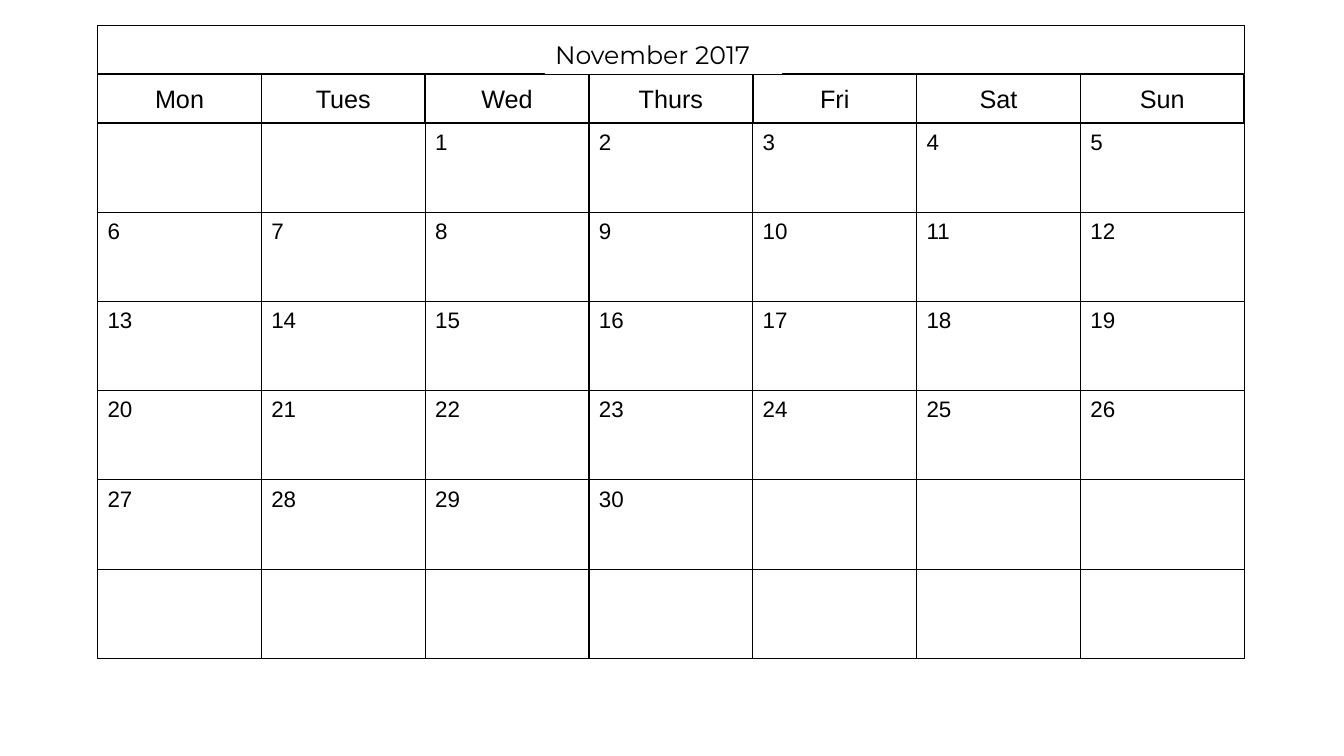
from dataclasses import dataclass
from typing import Any

from pptx import Presentation, util as u
from pptx.dml import color
from pptx.enum import shapes, text

PX = 9525
INK, PAPER = "000000", "FFFFFF"
LEFT, TOP, HEAD, BODY = 93, 24, 71, 117
WIDE, BAR, TALL = 156, 46, 85
DAYS = ["Mon", "Tues", "Wed", "Thurs", "Fri", "Sat", "Sun"]
WEEKS, FIRST, LAST = 6, 2, 30


@dataclass(frozen=True)
class Look:
    font: str
    size: int
    line: float
    align: text.PP_ALIGN
    frame: dict[str, Any]
    hang: int = 0


@dataclass(frozen=True)
class Box:
    x: int
    y: int
    w: int
    h: int
    words: str
    look: Look


NAME = Look("Montserrat", 18, 0, text.PP_ALIGN.LEFT, {
    "word_wrap": False,
    "auto_size": text.MSO_AUTO_SIZE.SHAPE_TO_FIT_TEXT,
    "vertical_anchor": text.MSO_ANCHOR.TOP,
})
DAY = Look("Arial", 18, 1, text.PP_ALIGN.CENTER, {
    "word_wrap": True,
    "vertical_anchor": text.MSO_ANCHOR.MIDDLE,
    "margin_top": 2 * PX,
    "margin_bottom": 2 * PX,
}, 36)
DATE = Look("Arial", 16, 0.75, text.PP_ALIGN.LEFT, {
    "word_wrap": True,
    "vertical_anchor": text.MSO_ANCHOR.TOP,
})


def tint(code: str) -> color.RGBColor:
    return color.RGBColor.from_string(code)


def assign(item: Any, values: dict[str, Any]) -> None:
    for key, value in values.items():
        setattr(item, key, value)


def style(shape: Any, box: Box) -> None:
    look = box.look
    shape.fill.solid()
    shape.fill.fore_color.rgb = tint(PAPER)
    if look.line:
        shape.line.color.rgb = tint(INK)
        shape.line.width = u.Pt(look.line)
    if not box.words:
        return
    frame = shape.text_frame
    frame.text = box.words
    assign(frame, look.frame)
    para = frame.paragraphs[0]
    para.alignment = look.align
    if look.hang:
        props = para._p.get_or_add_pPr()
        props.set("marL", str(look.hang * PX))
        props.set("indent", str(-look.hang * PX))
    font = para.runs[0].font
    assign(font, {"name": look.font, "size": u.Pt(look.size)})
    font.color.rgb = tint(INK)


def draw(slide: Any, box: Box) -> None:
    edges = [n * PX for n in (box.x, box.y, box.w, box.h)]
    shape = slide.shapes.add_shape(shapes.MSO_SHAPE.RECTANGLE, *edges)
    shape.shadow.inherit = False
    style(shape, box)


def head(slide: Any, box: Box) -> None:
    title = slide.shapes.title
    assign(title, {"left": box.x * PX, "top": box.y * PX,
                   "width": box.w * PX, "height": box.h * PX})
    style(title, box)
    title.element.getparent().append(title.element)


def main() -> None:
    deck = Presentation()
    assign(deck, {"slide_width": 1280 * PX, "slide_height": 720 * PX})
    slide = deck.slides.add_slide(deck.slide_layouts[5])
    count = len(DAYS)
    draw(slide, Box(LEFT, TOP, WIDE * count, BAR, "", DAY))
    head(slide, Box(519, 33, 226, 38, "November 2017", NAME))
    for slot in range(WEEKS * count):
        row, col = divmod(slot, count)
        date = slot - FIRST + 1
        words = str(date) if 1 <= date <= LAST else ""
        draw(slide, Box(LEFT + col * WIDE, BODY + row * TALL,
                        WIDE, TALL, words, DATE))
    for col, day in enumerate(DAYS):
        draw(slide, Box(LEFT + col * WIDE, HEAD, WIDE, BAR, day, DAY))
    deck.save("out.pptx")


if __name__ == "__main__":
    main()
